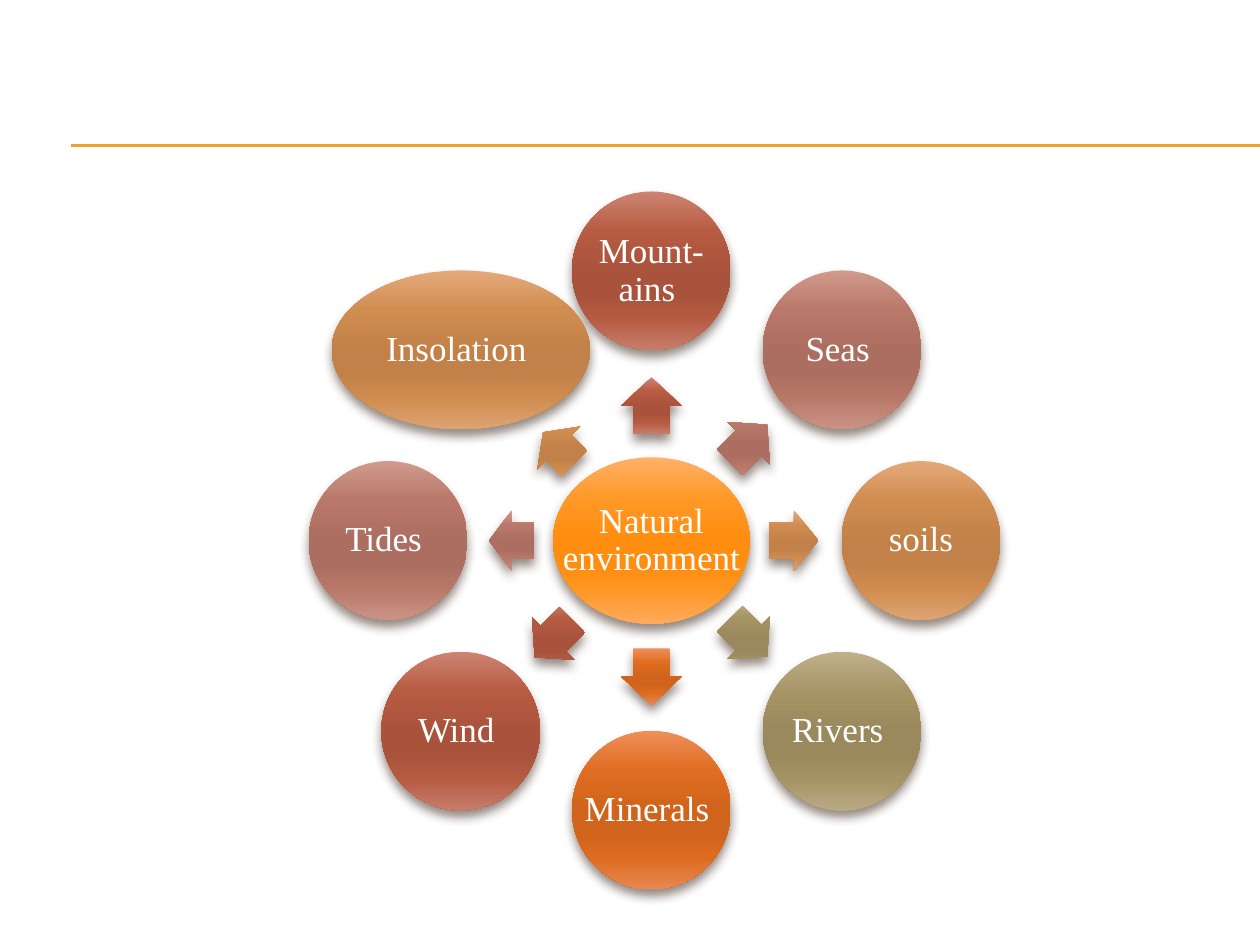
import math
from lxml import etree
from pptx import Presentation
from pptx import util as u
from pptx.dml.color import RGBColor
from pptx.enum import shapes, text
from pptx.oxml import parse_xml
from pptx.oxml.ns import nsdecls, qn

FONT = "Times New Roman"
INKS = {"rule": "F0A22E", "text": "FFFFFF", "shade": "4E3B30"}
BLENDS = {
    "amber": "FFB16A FF9826 FF8D0F FF8D0F FF9724 FFAA5C",
    "red": "CD8473 B75B42 AA533C AA533C B65B42 C77D6B",
    "rose": "D09A8D B97869 AB6E60 AB6E60 B87868 CA9386",
    "tan": "E4A97A D08D50 C18148 C18148 CF8C4F DEA372",
    "olive": "C0B18C A69465 9A895C 9A895C A59364 BAAA85",
    "orange": "EE8F5B E06D21 D0641C D0641C DE6C20 E88852",
}
STOPS = (0, 25, 50, 65, 80, 100)
MID_X, MID_Y = 5.17, 4.29
RING = 2.14
DISC = 1.26

# name, blend, disc width, disc shift, arrow length, arrow distance
FACTORS = [
    ("Mount-ains ", "red", DISC, 0, 0.45, 1.07),
    ("Seas ", "rose", DISC, 0, 0.42, 1.09),
    ("soils", "tan", DISC, 0, 0.39, 1.13),
    ("Rivers ", "olive", DISC, 0, 0.42, 1.09),
    ("Minerals ", "orange", DISC, 0, 0.45, 1.08),
    ("Wind ", "red", DISC, 0, 0.42, 1.1),
    ("Tides ", "rose", DISC, 0.05, 0.36, 1.11),
    ("Insolation ", "tan", 2.05, 0, 0.35, 1.04),
]


def color(name):
    return RGBColor.from_string(INKS[name])


def frame(x, y, wide, high):
    return [u.Inches(n) for n in (x - wide / 2, y - high / 2, wide, high)]


def add_rule(slide, y):
    rule = slide.shapes.add_connector(
        shapes.MSO_CONNECTOR.STRAIGHT,
        u.Inches(0.56), u.Inches(y), u.Inches(10), u.Inches(y))
    rule.line.color.rgb = color("rule")
    rule.line.width = u.Pt(0.75)
    etree.SubElement(rule.element.spPr, qn("a:effectLst"))


def add_solid(slide, kind, box, blend):
    solid = slide.shapes.add_shape(kind, *box)
    solid.line.fill.background()
    solid.shadow.inherit = False
    props = solid.element.spPr
    stops = "".join(
        f'<a:gs pos="{at * 1000}"><a:srgbClr val="{tone}"/></a:gs>'
        for at, tone in zip(STOPS, BLENDS[blend].split()))
    props.find(qn("a:prstGeom")).addnext(parse_xml(
        f'<a:gradFill {nsdecls("a")} rotWithShape="0"><a:gsLst>{stops}</a:gsLst>'
        '<a:lin ang="5400000" scaled="0"/></a:gradFill>'))
    props.find(qn("a:effectLst")).append(parse_xml(
        f'<a:outerShdw {nsdecls("a")} blurRad="{u.Pt(6)}" dist="{u.Pt(4)}" '
        f'dir="5400000" rotWithShape="0"><a:srgbClr val="{INKS["shade"]}">'
        '<a:alpha val="60000"/></a:srgbClr></a:outerShdw>'))
    return solid


def add_label(slide, box, words):
    body = slide.shapes.add_textbox(*box).text_frame
    body.word_wrap = True
    body.vertical_anchor = text.MSO_ANCHOR.MIDDLE
    body.margin_left = body.margin_right = u.Inches(0.03)
    body.margin_top = body.margin_bottom = u.Inches(0.03)
    para = body.paragraphs[0]
    para.text = words
    para.alignment = text.PP_ALIGN.CENTER
    para.line_spacing = 0.9
    para.space_after = u.Pt(7)
    para.font.name = FONT
    para.font.size = u.Pt(20)
    para.font.color.rgb = color("text")


def add_disc(slide, box, blend, words):
    add_solid(slide, shapes.MSO_SHAPE.OVAL, box, blend)
    add_label(slide, box, words)


def add_arrow(slide, box, blend, turn):
    arrow = add_solid(slide, shapes.MSO_SHAPE.RIGHT_ARROW, box, blend)
    arrow.adjustments[0] = 0.6
    arrow.adjustments[1] = 0.5
    arrow.rotation = turn


def main():
    deck = Presentation()
    deck.slide_width, deck.slide_height = u.Inches(10), u.Inches(7.5)
    slide = deck.slides.add_slide(deck.slide_layouts[6])
    for y in (1.15, 1.16):
        add_rule(slide, y)
    add_disc(slide, frame(MID_X, MID_Y, 1.56, 1.32), "amber", "Natural environment")
    for step, (name, blend, wide, shift, size, reach) in enumerate(FACTORS):
        turn = (270 + step * 360 / len(FACTORS)) % 360
        dx, dy = math.cos(math.radians(turn)), math.sin(math.radians(turn))
        spot = frame(MID_X + reach * dx, MID_Y + reach * dy, size, 0.48)
        add_arrow(slide, spot, blend, turn)
        disc = frame(MID_X + RING * dx + shift, MID_Y + RING * dy, wide, DISC)
        add_disc(slide, disc, blend, name)
    deck.save("out.pptx")


if __name__ == "__main__":
    main()
